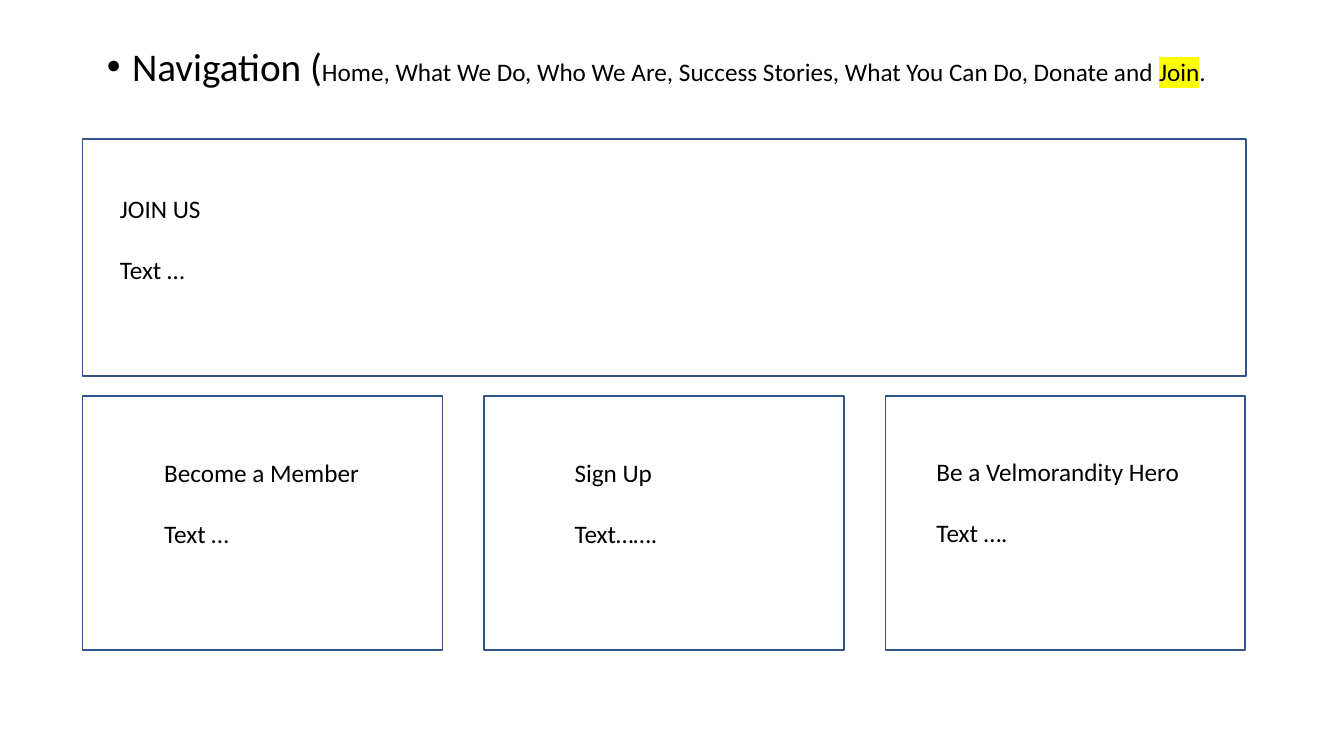
from dataclasses import dataclass

from lxml.etree import SubElement
from pptx import Presentation
from pptx.dml.color import RGBColor
from pptx.enum.shapes import MSO_SHAPE
from pptx.enum.text import MSO_AUTO_SIZE as AutoSize
from pptx.oxml.ns import qn
from pptx.util import Inches, Pt

NAVIGATION = [
    # text, theme size, highlighted
    ("Navigation (", "large", False),
    ("Home, What We Do, Who We Are, Success Stories, "
     "What You Can Do, Donate and ", "body", False),
    ("Join", "body", True),
    (".", "body", False),
]
# heading, body, text left, top, width, wraps
BANNER = ("JOIN US", "Text …", 1.09, 1.87, 1.01, False)
CARDS = [
    ("Become a Member", "Text …", 1.53, 4.49, 2.16, False),
    ("Sign Up", "Text…….", 5.6, 4.49, 2.13, True),
    ("Be a Velmorandity Hero", "Text ….", 9.19, 4.48, 2.94, True),
]


@dataclass(frozen=True)
class Theme:
    font: str = "Calibri"
    ink: str = "000000"
    outline: str = "325491"
    marker: str = "FFFF00"
    large: int = 28
    body: int = 18
    paragraph_gap: int = 22


THEME = Theme()
LEFT = 0.82
BANNER_TOP, BANNER_WIDTH, BANNER_HEIGHT = 1.38, 11.54, 2.35
CARD_TOP, CARD_WIDTH, CARD_HEIGHT = 3.93, 3.57, 2.52
CARD_STEP = 3.98
LABEL_HEIGHT = 1.01


def add_run(paragraph, text, size):
    run = paragraph.add_run()
    run.text = text
    run.font.size = Pt(size)
    run.font.name = THEME.font
    run.font.color.rgb = RGBColor.from_string(THEME.ink)
    return run


def highlight(run):
    properties = run.font._element
    marker = SubElement(properties, qn("a:highlight"))
    SubElement(marker, qn("a:srgbClr"), val=THEME.marker)
    properties.find(qn("a:solidFill")).addnext(marker)


def fill_navigation(placeholder):
    placeholder.left, placeholder.top = Inches(0.96), Inches(0.42)
    placeholder.width, placeholder.height = Inches(11.38), Inches(0.64)
    placeholder.text_frame.auto_size = AutoSize.NONE
    paragraph = placeholder.text_frame.paragraphs[0]
    paragraph.line_spacing = 0.9
    paragraph.space_before = Pt(10)
    properties = paragraph._p.get_or_add_pPr()
    properties.set("marL", str(Inches(0.25)))
    properties.set("indent", str(Inches(-0.25)))
    SubElement(properties, qn("a:buFont"), typeface="Arial")
    SubElement(properties, qn("a:buChar"), char="•")
    for text, size, marked in NAVIGATION:
        run = add_run(paragraph, text, getattr(THEME, size))
        if marked:
            highlight(run)


def add_panel(slide, left, top, width, height):
    panel = slide.shapes.add_shape(
        MSO_SHAPE.RECTANGLE, Inches(left), Inches(top), Inches(width), Inches(height))
    panel.shadow.inherit = False
    panel.fill.background()
    panel.line.color.rgb = RGBColor.from_string(THEME.outline)
    panel.line.width = Pt(1)


def add_label(slide, heading, body, left, top, width, wraps):
    label = slide.shapes.add_textbox(
        Inches(left), Inches(top), Inches(width), Inches(LABEL_HEIGHT))
    frame = label.text_frame
    frame.word_wrap = wraps
    frame.auto_size = AutoSize.SHAPE_TO_FIT_TEXT
    add_run(frame.paragraphs[0], heading, THEME.body)
    body_paragraph = frame.add_paragraph()
    body_paragraph.space_before = Pt(THEME.paragraph_gap)
    add_run(body_paragraph, body, THEME.body)


def main():
    deck = Presentation()
    deck.slide_width, deck.slide_height = Inches(13.33), Inches(7.5)
    slide = deck.slides.add_slide(deck.slide_layouts[1])
    title = slide.shapes.title._element
    title.getparent().remove(title)

    fill_navigation(slide.placeholders[1])
    add_panel(slide, LEFT, BANNER_TOP, BANNER_WIDTH, BANNER_HEIGHT)
    add_label(slide, *BANNER)
    for column, card in enumerate(CARDS):
        add_panel(slide, LEFT + column * CARD_STEP, CARD_TOP, CARD_WIDTH, CARD_HEIGHT)
        add_label(slide, *card)
    deck.save("out.pptx")


if __name__ == "__main__":
    main()
